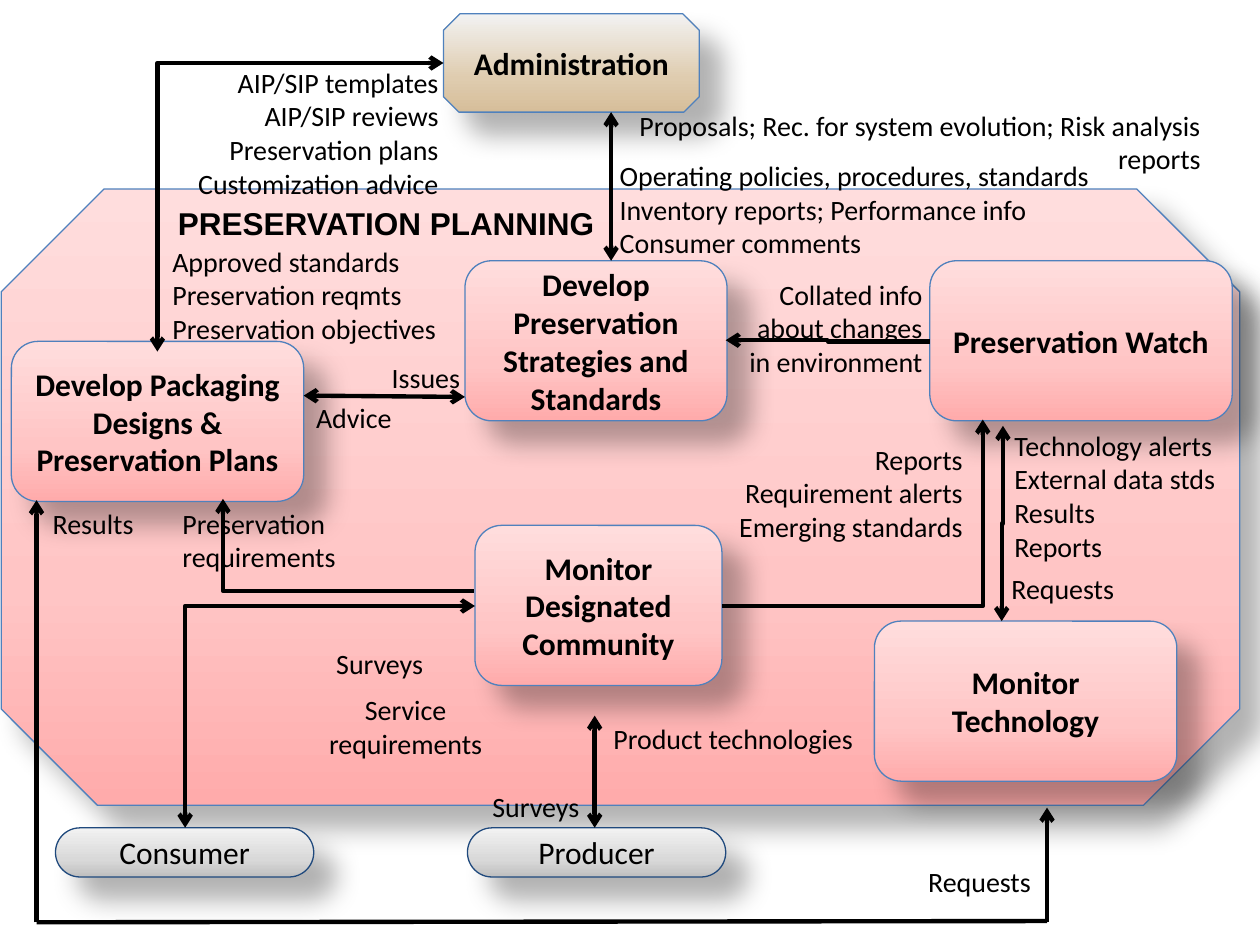
from copy import deepcopy
from dataclasses import dataclass

from lxml import etree
from pptx import Presentation
from pptx.dml.color import RGBColor
from pptx.enum.shapes import MSO_CONNECTOR, MSO_SHAPE
from pptx.enum.text import MSO_ANCHOR, MSO_AUTO_SIZE, PP_ALIGN
from pptx.oxml.ns import qn
from pptx.util import Inches, Pt

LEFT, CENTER, RIGHT = PP_ALIGN.LEFT, PP_ALIGN.CENTER, PP_ALIGN.RIGHT
TOP, MIDDLE = MSO_ANCHOR.TOP, MSO_ANCHOR.MIDDLE
ROUNDED, SNIPPED = MSO_SHAPE.ROUNDED_RECTANGLE, MSO_SHAPE.SNIP_2_SAME_RECTANGLE
STRAIGHT, ELBOW = MSO_CONNECTOR.STRAIGHT, MSO_CONNECTOR.ELBOW
CORNER = "bentConnector2"
HEAD, TAIL = "a:headEnd", "a:tailEnd"
BOTH = (HEAD, TAIL)
TITLE_ONLY = 5


@dataclass(frozen=True)
class Theme:
    ink: str = "000000"
    function_border: str = "4F81BD"
    entity_border: str = "1F497D"
    pink: tuple = ("FFABAB", "FFC5C5", "FFDDDD")
    tan: tuple = ("D6BE9A", "DFCCAF", "F2F2F2")
    gray: tuple = ("BFBFBF", "D9D9D9", "F2F2F2")
    gradient_positions: tuple = (0, 0.35, 1)
    snips: tuple = (0.167, 0.156)
    body_font: str = "Calibri"
    title_font: str = "Arial"
    large: int = 18
    small: int = 16
    border_width: float = 0.75
    flow_width: float = 2.5


@dataclass(frozen=True)
class Box:
    left: float
    top: float
    width: float
    height: float

    def point(self, x, y):
        return Inches(self.left + x), Inches(self.top + y)

    def place(self, x, y, width, height):
        return *self.point(x, y), Inches(width), Inches(height)


THEME = Theme()
SLIDE_BOX = Box(0, 0, 10, 7.5)
PLANNING_BOX = Box(0.01, 1.5, 9.83, 4.89)


def apply_format(target, values):
    for name, value in values.items():
        setattr(target, name, value)


def write_text(shape, text, size, align, anchor=TOP, bold=False,
               font=THEME.body_font, margins=(0.1, 0.1)):
    frame = shape.text_frame
    frame.text = text
    apply_format(frame, {
        "word_wrap": True, "auto_size": MSO_AUTO_SIZE.NONE, "vertical_anchor": anchor,
        "margin_left": Inches(margins[0]), "margin_right": Inches(margins[1]),
        "margin_top": Inches(0.05), "margin_bottom": Inches(0.05),
    })
    for paragraph in frame.paragraphs:
        paragraph.alignment = align
        for run in paragraph.runs:
            apply_format(run.font, {"name": font, "size": Pt(size), "bold": bold})
            run.font.color.rgb = RGBColor.from_string(THEME.ink)


def add_shadow(shape):
    shape.shadow.inherit = False
    effects = shape.element.spPr.find(qn("a:effectLst"))
    shadow = etree.SubElement(effects, qn("a:outerShdw"), blurRad=str(Pt(15)),
                              dist=str(Pt(18)), dir="2700000", algn="tl", rotWithShape="0")
    color = etree.SubElement(shadow, qn("a:srgbClr"), val=THEME.ink)
    etree.SubElement(color, qn("a:alpha"), val="30000")


def add_block(slide, kind, place, colors, border, adjustments=()):
    shape = slide.shapes.add_shape(kind, *place)
    for index, value in enumerate(adjustments):
        shape.adjustments[index] = value
    shape.fill.gradient()
    shape.fill.gradient_angle = 90
    stops = shape.element.spPr.find(".//" + qn("a:gsLst"))
    stops.insert(1, deepcopy(stops[0]))
    for stop, position, color in zip(shape.fill.gradient_stops,
                                     THEME.gradient_positions, colors):
        stop.position = position
        stop.color.rgb = RGBColor.from_string(color)
    shape.line.color.rgb = RGBColor.from_string(border)
    shape.line.width = Pt(THEME.border_width)
    add_shadow(shape)
    return shape


def add_flow(slide, box, kind, start, end, arrows=(), rotation=0):
    connector = slide.shapes.add_connector(STRAIGHT if kind == STRAIGHT else ELBOW,
                                           *box.point(*start), *box.point(*end))
    connector.line.color.rgb = RGBColor.from_string(THEME.ink)
    connector.line.width = Pt(THEME.flow_width)
    properties = connector.element.spPr
    if kind == CORNER:
        properties.find(qn("a:prstGeom")).set("prst", CORNER)
    if rotation:
        properties.find(qn("a:xfrm")).set("rot", str(rotation * 60000))
    for arrow in arrows:
        etree.SubElement(properties.find(qn("a:ln")), qn(arrow), type="arrow")
    etree.SubElement(properties, qn("a:effectLst"))


def add_label(slide, box, text, place, align=LEFT, margins=(0.1, 0.1)):
    shape = slide.shapes.add_textbox(*box.place(*place))
    write_text(shape, text, THEME.small, align, margins=margins)


def draw_planning(slide, box):
    add_block(slide, SNIPPED, box.place(0, 0, box.width, box.height),
              THEME.pink, THEME.function_border, THEME.snips)
    for text, x, y, width in (
        ("Develop Preservation Strategies and Standards", 3.68, 0.57, 2.08),
        ("Monitor Technology", 6.93, 3.43, 2.4),
        ("Develop Packaging Designs & Preservation Plans", 0.08, 1.21, 2.32),
        ("Monitor Designated Community", 3.76, 2.67, 1.96),
        ("Preservation Watch", 7.37, 0.57, 2.4),
    ):
        shape = add_block(slide, ROUNDED, box.place(x, y, width, 1.27),
                          THEME.pink, THEME.function_border)
        write_text(shape, text, THEME.large, CENTER, MIDDLE, True)
    for flow in (
        (STRAIGHT, (2.4, 1.64), (3.68, 1.65), BOTH),
        (CORNER, (5.72, 3.31), (7.79, 1.83), (TAIL,)),
        (ELBOW, (7.17, 2.65), (8.72, 2.66), BOTH, 90),
        (CORNER, (3.75, 3.19), (1.76, 2.46), (TAIL,)),
        (ELBOW, (5.75, 1.2), (7.37, 1.21), (HEAD,)),
    ):
        add_flow(slide, box, *flow)
    for label in (
        ("Technology alerts\nExternal data stds\nResults\nReports",
         (8.04, 1.85, 1.79, 1.18), LEFT, (0, 0)),
        ("Collated info\nabout changes\nin environment", (5.01, 0.65, 2.4, 0.91), RIGHT),
        ("Preservation requirements", (1.34, 2.47, 2.16, 0.64)),
        ("Issues", (2.76, 1.31, 0.98, 0.37), RIGHT),
        ("Advice", (2.4, 1.63, 0.98, 0.37)),
        ("Reports\nRequirement alerts\nEmerging standards",
         (5.55, 1.96, 2.18, 0.91), RIGHT),
        ("Requests", (7.71, 2.99, 1.22, 0.37), RIGHT),
    ):
        add_label(slide, box, *label)


def draw_title(slide, box):
    title = slide.shapes.title
    left, top, width, height = box.place(0.51, 0.07, 5.09, 0.4)
    apply_format(title, {"left": left, "top": top, "width": width, "height": height})
    write_text(title, "PRESERVATION PLANNING", THEME.large, CENTER,
               bold=True, font=THEME.title_font)
    slide.shapes.element.append(title.element)


def draw_environment(slide, box):
    administration = add_block(slide, SNIPPED, box.place(3.52, 0.11, 2.03, 0.78),
                               THEME.tan, THEME.function_border, THEME.snips)
    write_text(administration, "Administration", THEME.large, CENTER, MIDDLE, True)
    for text, x in (("Producer", 3.71), ("Consumer", 0.44)):
        shape = add_block(slide, ROUNDED, box.place(x, 6.57, 2.05, 0.39),
                          THEME.gray, THEME.entity_border, (0.5,))
        write_text(shape, text, THEME.large, CENTER, MIDDLE)
    for flow in (
        (STRAIGHT, (4.85, 0.89), (4.85, 2.07), BOTH),
        (STRAIGHT, (4.72, 5.68), (4.72, 6.57), BOTH),
        (CORNER, (3.52, 0.5), (1.25, 2.79), BOTH),
        (CORNER, (3.77, 4.81), (1.47, 6.57), BOTH),
        (STRAIGHT, (0.29, 7.32), (8.31, 7.31)),
        (STRAIGHT, (8.31, 7.32), (8.31, 6.41), (TAIL,)),
        (STRAIGHT, (0.29, 7.32), (0.29, 3.97), (TAIL,)),
    ):
        add_flow(slide, box, *flow)
    for label in (
        ("Requests", (7.06, 6.81, 1.22, 0.37), RIGHT),
        ("Product technologies", (4.77, 5.68, 2.72, 0.37)),
        ("Surveys", (3.81, 6.22, 0.98, 0.37)),
        ("Service requirements", (2.44, 5.45, 1.56, 0.64), CENTER),
        ("Surveys", (2.57, 5.08, 0.98, 0.37)),
        ("Results", (0.32, 3.97, 1.22, 0.37)),
        ("Proposals; Rec. for system evolution; Risk analysis reports",
         (4.81, 0.81, 4.72, 0.64), RIGHT, (0.1, 0)),
        ("Operating policies, procedures, standards\nInventory reports; Performance info\n"
         "Consumer comments", (4.82, 1.21, 4.72, 0.91)),
        ("AIP/SIP templates\nAIP/SIP reviews\nPreservation plans\nCustomization advice",
         (1.31, 0.47, 2.27, 1.18), RIGHT),
        ("Approved standards\nPreservation reqmts\nPreservation objectives",
         (1.27, 1.89, 2.36, 0.91)),
    ):
        add_label(slide, box, *label)


def main():
    presentation = Presentation()
    presentation.slide_width = Inches(SLIDE_BOX.width)
    presentation.slide_height = Inches(SLIDE_BOX.height)
    slide = presentation.slides.add_slide(presentation.slide_layouts[TITLE_ONLY])
    draw_planning(slide, PLANNING_BOX)
    draw_environment(slide, SLIDE_BOX)
    draw_title(slide, PLANNING_BOX)
    presentation.save("out.pptx")


if __name__ == "__main__":
    main()
